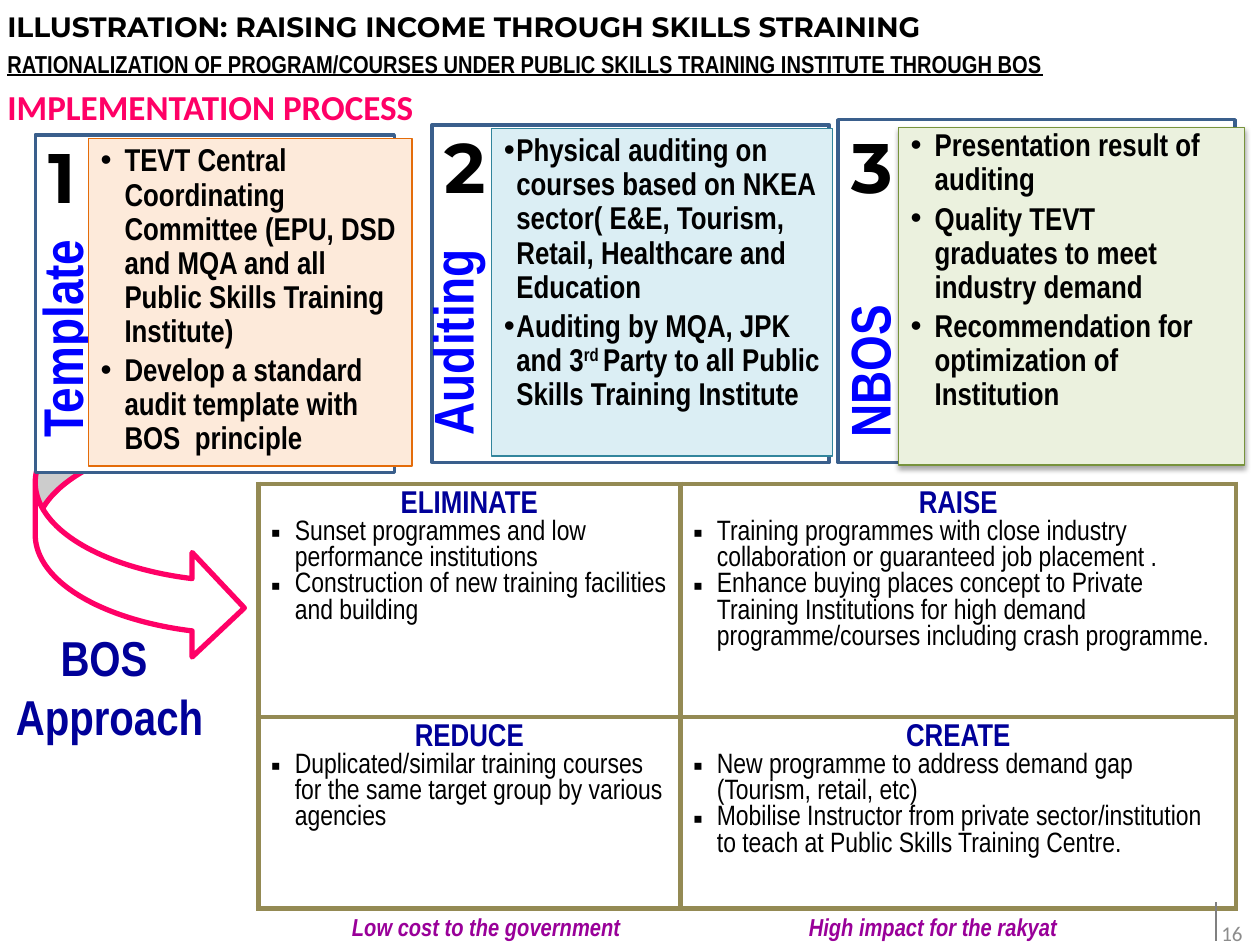
import pptx
import pptx.dml.color
import pptx.enum.shapes
import pptx.enum.text
import pptx.oxml
import pptx.oxml.ns
import pptx.util
from lxml import etree

PX = 9144  # 100 px to the inch
NARROW = "Arial Narrow"
SHAPE = pptx.enum.shapes.MSO_SHAPE
ALIGN = pptx.enum.text.PP_ALIGN
ANCHOR = pptx.enum.text.MSO_ANCHOR

BODY = dict(size=18, name=NARROW, color="000000", bold=True)
CELL = dict(size=16, name=NARROW, color="000000", bold=False)
HEADING = dict(size=18, name=NARROW, color="000099", bold=True)
LABEL = dict(size=32, name=NARROW, color="0000FF", bold=True)
NUMBER = dict(size=40, name="Montserrat", color="000000", bold=True)
FOOTER = dict(size=14, name=NARROW, color="990099", bold=True, italic=True)


def emu(*px):
    return [pptx.util.Emu(v * PX) for v in px]


def rgb(hex_text):
    return pptx.dml.color.RGBColor.from_string(hex_text)


def sub(parent, tag, **attrs):
    el = etree.SubElement(parent, pptx.oxml.ns.qn(tag))
    for key, value in attrs.items():
        el.set(key, str(value))
    return el


def add_run(p, text, fmt, baseline=None):
    r = p.add_run()
    r.text = text
    for key, value in fmt.items():
        if key == "color":
            r.font.color.rgb = rgb(value)
        else:
            setattr(r.font, key, pptx.util.Pt(value) if key == "size" else value)
    if baseline:
        r._r.get_or_add_rPr().set("baseline", str(baseline))


def add_bullet(p, char, indent):
    pPr = p._p.get_or_add_pPr()
    pPr.set("marL", str(indent * PX))
    pPr.set("indent", str(-indent * PX))
    sub(pPr, "a:buFont", typeface="Arial")
    sub(pPr, "a:buChar", char=char)


def paragraphs(tf, count):
    return [tf.paragraphs[0]] + [tf.add_paragraph() for _ in range(count - 1)]


def add_text(s, box, lines, fmt, align=ALIGN.LEFT, wrap=True):
    sp = s.shapes.add_textbox(*emu(*box))
    tf = sp.text_frame
    tf.word_wrap = wrap
    for p, line in zip(paragraphs(tf, len(lines)), lines):
        p.alignment = align
        add_run(p, line, fmt)
    return sp


def add_box(s, box, fill, line, width, kind=SHAPE.RECTANGLE):
    sp = s.shapes.add_shape(kind, *emu(*box))
    sp.shadow.inherit = False
    sp.fill.solid()
    sp.fill.fore_color.rgb = rgb(fill)
    sp.line.color.rgb = rgb(line)
    sp.line.width = pptx.util.Pt(width)
    return sp


def add_soft_shadow(sp):
    effects = sp._element.spPr.find(pptx.oxml.ns.qn("a:effectLst"))
    shadow = sub(effects, "a:outerShdw", blurRad=39370, dist=22860, dir=5400000, rotWithShape=0)
    sub(sub(shadow, "a:srgbClr", val="000000"), "a:alpha", val=35000)


def add_header(s, x, y):
    for dy, h, text, fmt in [
        (60, 44, "IMPLEMENTATION PROCESS", dict(size=20, name="Calibri", color="FF0066", bold=True)),
        (31, 34, "RATIONALIZATION OF PROGRAM/COURSES UNDER PUBLIC SKILLS TRAINING INSTITUTE THROUGH BOS",
         dict(size=14, name=NARROW, color="000000", bold=True, underline=True)),
        (0, 37, "ILLUSTRATION: RAISING INCOME THROUGH SKILLS STRAINING",
         dict(size=16, name="Montserrat", color="000000", bold=True)),
    ]:
        add_text(s, (x, y + dy, 941, h), [text], fmt)


def add_card(s, box, number, number_at, label, panel, colors, items, indent=19):
    """Step card: frame, tinted panel with bullets, upright label and number."""
    x, y = box[:2]
    add_box(s, box, "FFFFFF", "3A5F8C", 2)

    # Upright label
    text, dx, dy, w, align = label
    sp = add_text(s, (x + dx, y + dy, w, 44), [text], LABEL, align)
    sp.rotation = 270
    tf = sp.text_frame
    tf.margin_left, tf.margin_top, tf.margin_right, tf.margin_bottom = emu(0, 0, 39, 0)
    tf.paragraphs[0].line_spacing = 0.9

    # Panel and bullets
    dx, dy, w, h, raised = panel
    sp = add_box(s, (x + dx, y + dy, w, h), *colors, 0.75)
    if raised:
        add_soft_shadow(sp)
        sp = s.shapes.add_textbox(*emu(x + dx, y + dy - 3, w - 8, h - 31))
    tf = sp.text_frame
    tf.word_wrap = True
    tf.vertical_anchor = ANCHOR.TOP
    for p, runs in zip(paragraphs(tf, len(items)), items):
        p.alignment = ALIGN.LEFT
        p.line_spacing = 0.9
        p.space_after = pptx.util.Pt(3)
        add_bullet(p, "•", indent)
        for i, text in enumerate(runs):
            add_run(p, text, BODY, 30000 if i == 1 else None)

    # Number
    dx, dy = number_at
    add_text(s, (x + dx, y + dy, 58, 77), [number], NUMBER, ALIGN.CENTER, wrap=False)


def add_approach(s, x, y):
    add_text(s, (x, y, 170, 104), ["BOS ", "Approach"], dict(HEADING, size=28), ALIGN.CENTER, wrap=False)


def add_grid(s, box, cols, rows, cells):
    """Two-by-two table of actions."""
    table = s.shapes.add_table(len(rows), len(cols), *emu(*box)).table
    table.first_row = table.horz_banding = False
    for col, w in zip(table.columns, emu(*cols)):
        col.width = w
    for row, h in zip(table.rows, emu(*rows)):
        row.height = h
    for cell, (heading, *items) in zip(table.iter_cells(), cells):
        ps = paragraphs(cell.text_frame, len(items) + 1)
        ps[0].alignment = ALIGN.CENTER
        add_run(ps[0], heading, HEADING)
        for p, item in zip(ps[1:], items):
            add_bullet(p, "▪", 19)
            add_run(p, item, CELL)
        tcPr = cell._tc.get_or_add_tcPr()
        for side in ("a:lnL", "a:lnR", "a:lnT", "a:lnB"):
            ln = sub(tcPr, side, w=38100)
            sub(sub(ln, "a:solidFill"), "a:srgbClr", val="948A54")
        cell.fill.solid()
        cell.fill.fore_color.rgb = rgb("FFFFFF")


def add_footer(s, y):
    add_text(s, (228, y, 316, 34), ["Low cost to the government"], FOOTER, ALIGN.CENTER)
    add_text(s, (610, y, 261, 34), ["High impact for the rakyat"], FOOTER, ALIGN.CENTER)
    sp = add_text(s, (763, y + 2, 233, 40), ["16"], dict(size=12, name="Calibri", color="8C8C8C"), ALIGN.RIGHT)
    sp.text_frame.vertical_anchor = ANCHOR.MIDDLE
    rule = s.shapes.add_connector(pptx.enum.shapes.MSO_CONNECTOR.STRAIGHT, *emu(965, y - 3, 965, y + 28))
    rule.line.color.rgb = rgb("808080")
    rule.line.width = pptx.util.Pt(0.75)
    sub(rule._element.spPr, "a:effectLst")


def main():
    prs = pptx.Presentation()
    prs.slide_width, prs.slide_height = emu(1000, 750)
    s = prs.slides.add_slide(prs.slide_layouts[6])

    add_box(s, (28, 304, 166, 220), "FFFFFF", "FF0066", 3, SHAPE.CURVED_RIGHT_ARROW)
    add_header(s, -4, 3)
    add_card(s, (28, 107, 285, 268), "1", (-8, -6), ("Template", -83, 114, 209, ALIGN.LEFT),
             (42, 3, 257, 260, False), ("FDEADA", "E46C0A"), [
        ["TEVT Central Coordinating Committee (EPU, DSD and MQA and all Public Skills Training Institute)"],
        ["Develop a standard audit template with BOS  principle"]])
    add_card(s, (343, 99, 315, 268), "2", (-3, -6), ("Auditing", -80, 134, 193, ALIGN.RIGHT),
             (47, 3, 271, 260, False), ("DBEEF4", "31859C"), [
        ["Physical auditing on courses based on NKEA sector( E&E, Tourism, Retail, Healthcare and Education"],
        ["Auditing by MQA, JPK and 3", "rd ", "Party to all Public Skills Training Institute"]], indent=10)
    add_card(s, (665, 95, 315, 272), "3", (-2, -2), ("NBOS", -79, 126, 209, ALIGN.LEFT),
             (48, 6, 275, 268, True), ("EBF1DE", "77933C"), [
        ["Presentation result of auditing"],
        ["Quality TEVT graduates to meet industry demand"],
        ["Recommendation for optimization of Institution"]])
    add_approach(s, 2, 493)
    add_grid(s, (205, 384, 776, 337), (335, 441), (185, 152), [
        ("ELIMINATE", "Sunset programmes and low performance institutions",
         "Construction of new training facilities and building"),
        ("RAISE", "Training programmes with close industry collaboration or guaranteed job placement .",
         "Enhance buying places concept to Private Training Institutions for high demand "
         "programme/courses including crash programme."),
        ("REDUCE", "Duplicated/similar training courses for the same target group by various agencies"),
        ("CREATE", "New programme to address demand gap (Tourism, retail, etc)",
         "Mobilise Instructor from private sector/institution to teach at Public Skills Training Centre.")])
    add_footer(s, 719)
    prs.save("out.pptx")


if __name__ == "__main__":
    main()
